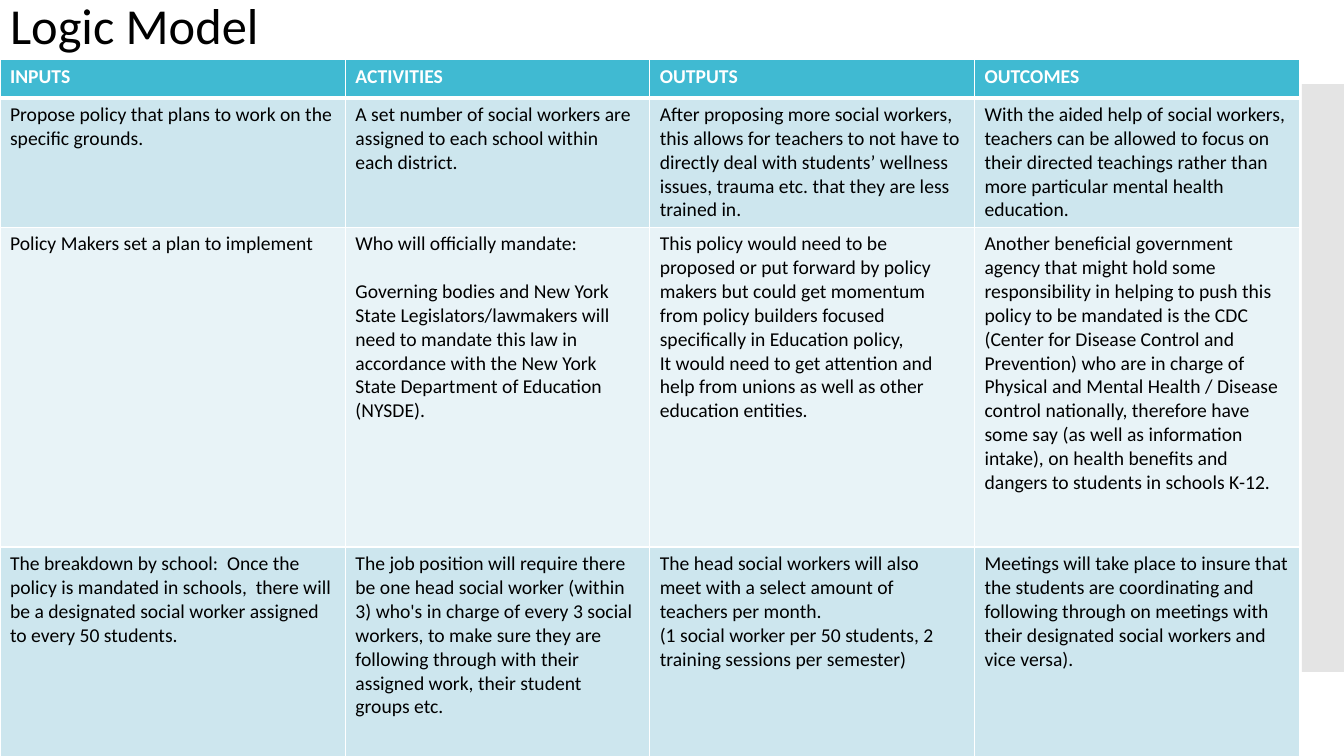
from lxml import etree
from pptx import Presentation
from pptx.dml.color import RGBColor
from pptx.enum.shapes import MSO_SHAPE
from pptx.enum.text import MSO_ANCHOR, MSO_AUTO_SIZE, PP_ALIGN
from pptx.oxml.ns import qn
from pptx.util import Pt

TEAL = RGBColor(0x40, 0xBA, 0xD2)
BAND_DARK = RGBColor(0xCD, 0xE6, 0xEE)
BAND_LIGHT = RGBColor(0xE8, 0xF3, 0xF7)
GREY = RGBColor(0xC8, 0xC8, 0xC8)
WHITE = RGBColor(0xFF, 0xFF, 0xFF)
BLACK = RGBColor(0, 0, 0)
FONT = "Calibri"


def add_text(para, text, size, color, bold=False):
    span = para.add_run()
    span.text = text
    span.font.name = FONT
    span.font.size = Pt(size)
    span.font.bold = bold
    span.font.color.rgb = color


def add_border(cell, side, width):
    line = etree.SubElement(cell._tc.get_or_add_tcPr(), qn(f"a:ln{side}"), w=str(Pt(width)))
    fill = etree.SubElement(line, qn("a:solidFill"))
    etree.SubElement(fill, qn("a:srgbClr"), val=str(WHITE))


deck = Presentation()
deck.slide_width, deck.slide_height = Pt(960), Pt(540)
page = deck.slides.add_slide(deck.slide_layouts[5])

# Translucent side strip
strip = page.shapes.add_shape(MSO_SHAPE.RECTANGLE, Pt(930), Pt(60), Pt(30), Pt(420))
strip.shadow.inherit = False
strip.fill.solid()
strip.fill.fore_color.rgb = GREY
strip.line.fill.background()
strip_color = strip._element.spPr.find(f"{qn('a:solidFill')}/{qn('a:srgbClr')}")
etree.SubElement(strip_color, qn("a:alpha"), val="49000")

# Title
title = page.shapes.title
title.left, title.top, title.width, title.height = Pt(0), Pt(0.7), Pt(259), Pt(39)
frame = title.text_frame
frame.auto_size = MSO_AUTO_SIZE.NONE
frame.vertical_anchor = MSO_ANCHOR.MIDDLE
para = frame.paragraphs[0]
para.alignment = PP_ALIGN.LEFT
para.line_spacing = 0.9
add_text(para, "Logic Model", 36, BLACK)

# Table content: each cell is a list of paragraphs
ROWS = [
    [["INPUTS"], ["ACTIVITIES"], ["OUTPUTS"], ["OUTCOMES"]],
    [
        ["Propose policy that plans to work on the specific grounds."],
        ["A set number of social workers are assigned to each school within each district."],
        ["After proposing more social workers, this allows for teachers to not have to directly "
         "deal with students’ wellness issues, trauma etc. that they are less trained in."],
        ["With the aided help of social workers, teachers can be allowed to focus on their "
         "directed teachings rather than more particular mental health education."],
    ],
    [
        ["Policy Makers set a plan to implement"],
        ["Who will officially mandate:",
         "Governing bodies and New York State Legislators/lawmakers will need to mandate this "
         "law in accordance with the New York State Department of Education (NYSDE)."],
        ["This policy would need to be proposed or put forward by policy makers but could get "
         "momentum from policy builders focused specifically in Education policy,",
         "It would need to get attention and help from unions as well as other education "
         "entities."],
        ["Another beneficial government agency that might hold some responsibility in helping "
         "to push this policy to be mandated is the CDC (Center for Disease Control and "
         "Prevention) who are in charge of Physical and Mental Health / Disease control "
         "nationally, therefore have some say (as well as information intake), on health "
         "benefits and dangers to students in schools K-12."],
    ],
    [
        ["The breakdown by school:  Once the policy is mandated in schools,  there will be a "
         "designated social worker assigned to every 50 students."],
        ["The job position will require there be one head social worker (within 3) who's in "
         "charge of every 3 social workers, to make sure they are following through with their "
         "assigned work, their student groups etc."],
        ["The head social workers will also meet with a select amount of teachers per month.",
         "(1 social worker per 50 students, 2 training sessions per semester)"],
        ["Meetings will take place to insure that the students are coordinating and following "
         "through on meetings with their designated social workers and vice versa)."],
    ],
]
COLUMN_WIDTHS = [246.7, 217.4, 232, 232]
ROW_HEIGHTS = [27.4, 92.2, 228.5, 154.5]
ROW_FILLS = [TEAL, BAND_DARK, BAND_LIGHT, BAND_DARK]

# Table
table = page.shapes.add_table(len(ROWS), len(COLUMN_WIDTHS), Pt(0), Pt(42.5),
                              Pt(sum(COLUMN_WIDTHS)), Pt(sum(ROW_HEIGHTS))).table
for column, width in zip(table.columns, COLUMN_WIDTHS):
    column.width = Pt(width)
for r, (row, height, color) in enumerate(zip(ROWS, ROW_HEIGHTS, ROW_FILLS)):
    table.rows[r].height = Pt(height)
    header = r == 0
    for c, lines in enumerate(row):
        cell = table.cell(r, c)
        add_border(cell, "L", 1)
        add_border(cell, "R", 1)
        add_border(cell, "T", 3 if r == 1 else 1)
        add_border(cell, "B", 3 if header else 1)
        cell.fill.solid()
        cell.fill.fore_color.rgb = color
        for i, line in enumerate(lines):
            para = cell.text_frame.paragraphs[0] if i == 0 else cell.text_frame.add_paragraph()
            add_text(para, line, 14, WHITE if header else BLACK, header)

# One-line gap after the mandate question
table.cell(2, 1).text_frame.paragraphs[0].space_after = Pt(17)

deck.save("out.pptx")
